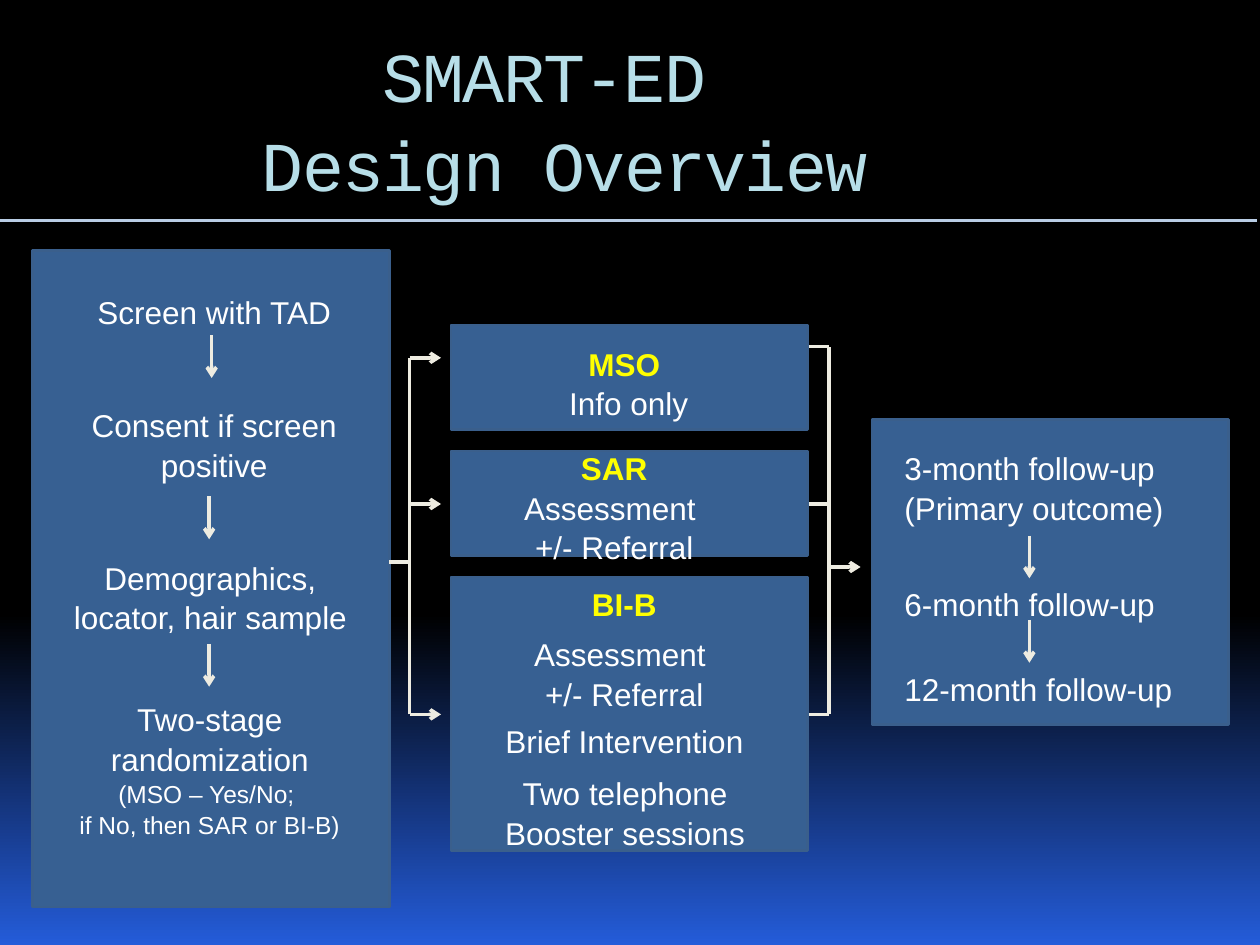
import pptx
import pptx.util
import pptx.dml.color
import pptx.enum.shapes
import pptx.enum.text
import pptx.oxml.ns
import lxml.etree

Inches = pptx.util.Inches
Pt = pptx.util.Pt
Align = pptx.enum.text.PP_ALIGN
qn = pptx.oxml.ns.qn

HUES = {
    "black": "000000", "glow": "245CD9", "box": "376092", "edge": "3A5F8C",
    "title": "B7DEE8", "rule": "B9CDE5", "line": "EEECE1",
    "white": "FFFFFF", "yellow": "FFFF00",
}


def hue(name):
    return pptx.dml.color.RGBColor.from_string(HUES[name])


def link(slide, x1, y1, x2, y2, arrow=False, color="line", width=2):
    line = slide.shapes.add_connector(
        pptx.enum.shapes.MSO_CONNECTOR.STRAIGHT,
        Inches(x1), Inches(y1), Inches(x2), Inches(y2))
    line.line.color.rgb = hue(color)
    line.line.width = Pt(width)
    props = line._element.spPr
    if arrow:
        lxml.etree.SubElement(props.find(qn("a:ln")), qn("a:tailEnd"), type="arrow")
    lxml.etree.SubElement(props, qn("a:effectLst"))


def panel(slide, x, y, w, h):
    rect = slide.shapes.add_shape(
        pptx.enum.shapes.MSO_SHAPE.RECTANGLE,
        Inches(x), Inches(y), Inches(w), Inches(h))
    rect.shadow.inherit = False
    rect.fill.solid()
    rect.fill.fore_color.rgb = hue("box")
    rect.line.color.rgb = hue("edge")
    rect.line.width = Pt(1.5)


def label(slide, x, y, w, h, rows, align=Align.CENTER, head=False, gap=0, small=()):
    frame = slide.shapes.add_textbox(Inches(x), Inches(y), Inches(w), Inches(h)).text_frame
    frame.word_wrap = True
    frame.auto_size = pptx.enum.text.MSO_AUTO_SIZE.SHAPE_TO_FIT_TEXT
    for i, words in enumerate(rows):
        para = frame.paragraphs[0] if i == 0 else frame.add_paragraph()
        para.alignment = align
        para.line_spacing = 1.05
        top = head and i == 0
        if top and gap:
            para.space_after = Pt(gap)
        run = para.add_run()
        run.text = words
        run.font.name = "Arial"
        run.font.size = Pt(14 if i in small else 18)
        run.font.bold = top
        run.font.color.rgb = hue("yellow" if top else "white")


def header(slide, x, y, w, h):
    title = slide.shapes.title
    title.left, title.top, title.width, title.height = map(Inches, (x, y, w, h))
    frame = title.text_frame
    frame.word_wrap = True
    frame.auto_size = pptx.enum.text.MSO_AUTO_SIZE.NONE
    frame.vertical_anchor = pptx.enum.text.MSO_ANCHOR.TOP
    para = frame.paragraphs[0]
    para.alignment = Align.CENTER
    para.line_spacing = 1.06
    for i, words in enumerate(("SMART-ED ", "Design Overview")):
        if i:
            para.add_line_break()
        run = para.add_run()
        run.text = words
        run.font.name = "Courier New"
        run.font.size = Pt(40)
        run.font.color.rgb = hue("title")
        run._r.get_or_add_rPr().set("spc", "-100")
    link(slide, 0, 1.75, 9.98, 1.75, color="rule", width=2.25)


def intake(slide, x, y, w, h):
    panel(slide, x, y, w, h)
    label(slide, x + 0.19, y + 0.27, 2.5, 0.4, ["Screen with TAD"])
    label(slide, x + 0.19, y + 1.17, 2.5, 0.71, ["Consent if screen positive"])
    label(slide, x + 0.16, y + 2.38, 2.5, 0.71, ["Demographics, locator, hair sample"])
    label(slide, x + 0.07, y + 3.5, 2.67, 1.18,
          ["Two-stage randomization", "(MSO – Yes/No; ", "if No, then SAR or BI-B)"],
          small=(1, 2))
    for dx, dy in ((1.42, 0.67), (1.4, 1.95), (1.4, 3.12)):
        link(slide, x + dx, y + dy, x + dx, y + dy + 0.34, arrow=True)


def arms(slide, x, y, w, h):
    panel(slide, x, y, w, 0.83)
    panel(slide, x, y + 1, w, 0.83)
    panel(slide, x, y + 2, w, h - 2)
    care = ["Assessment ", "+/- Referral"]
    label(slide, x + 0.25, y + 0.09, 2.25, 0.71, ["MSO", " Info only"], head=True)
    label(slide, x + 0.17, y + 0.92, 2.25, 1.01, ["SAR"] + care, head=True)
    label(slide, x + 0.25, y + 2, 2.25, 1.09, ["BI-B"] + care, head=True, gap=6)
    label(slide, x + 0.25, y + 3.09, 2.25, 0.4, ["Brief Intervention"])
    label(slide, x + 0.17, y + 3.5, 2.42, 0.71, ["Two telephone Booster sessions"])


def follow(slide, x, y, w, h):
    panel(slide, x, y, w, h)
    steps = ((0.17, 0.71, "3-month follow-up (Primary outcome)"),
             (1.25, 0.4, "6-month follow-up"),
             (1.92, 0.4, "12-month follow-up"))
    for dy, tall, words in steps:
        label(slide, x + 0.16, y + dy, 2.58, tall, [words], align=Align.LEFT)
    for dy in (0.92, 1.59):
        link(slide, x + 1.25, y + dy, x + 1.25, y + dy + 0.34, arrow=True)


def split(slide, x, y, w, h):
    mid = x + 0.16
    link(slide, x, y + 1.62, mid, y + 1.62)
    link(slide, mid, y + h, mid, y)
    for dy in (0, 1.16, h):
        link(slide, mid, y + dy, x + w, y + dy, arrow=True)


def merge(slide, x, y, w, h):
    mid = x + 0.16
    for dy in (0, 1.25, h):
        link(slide, x, y + dy, mid, y + dy)
    link(slide, mid, y + h, mid, y)
    link(slide, mid, y + 1.75, x + w, y + 1.75, arrow=True)


def main():
    deck = pptx.Presentation()
    deck.slide_width, deck.slide_height = Inches(10), Inches(7.5)
    slide = deck.slides.add_slide(deck.slide_layouts[5])
    fill = slide.background.fill
    fill.gradient()
    fill.gradient_angle = 270
    for stop, spot, name in zip(fill.gradient_stops, (0.65, 1), ("black", "glow")):
        stop.position = spot
        stop.color.rgb = hue(name)
    header(slide, -0.02, 0.17, 9, 1.25)
    intake(slide, 0.26, 1.99, 2.83, 5.21)
    arms(slide, 3.58, 2.58, 2.83, 4.17)
    follow(slide, 6.92, 3.33, 2.83, 2.42)
    split(slide, 3.09, 2.84, 0.41, 2.83)
    merge(slide, 6.42, 2.75, 0.41, 2.92)
    deck.save("out.pptx")


if __name__ == "__main__":
    main()
